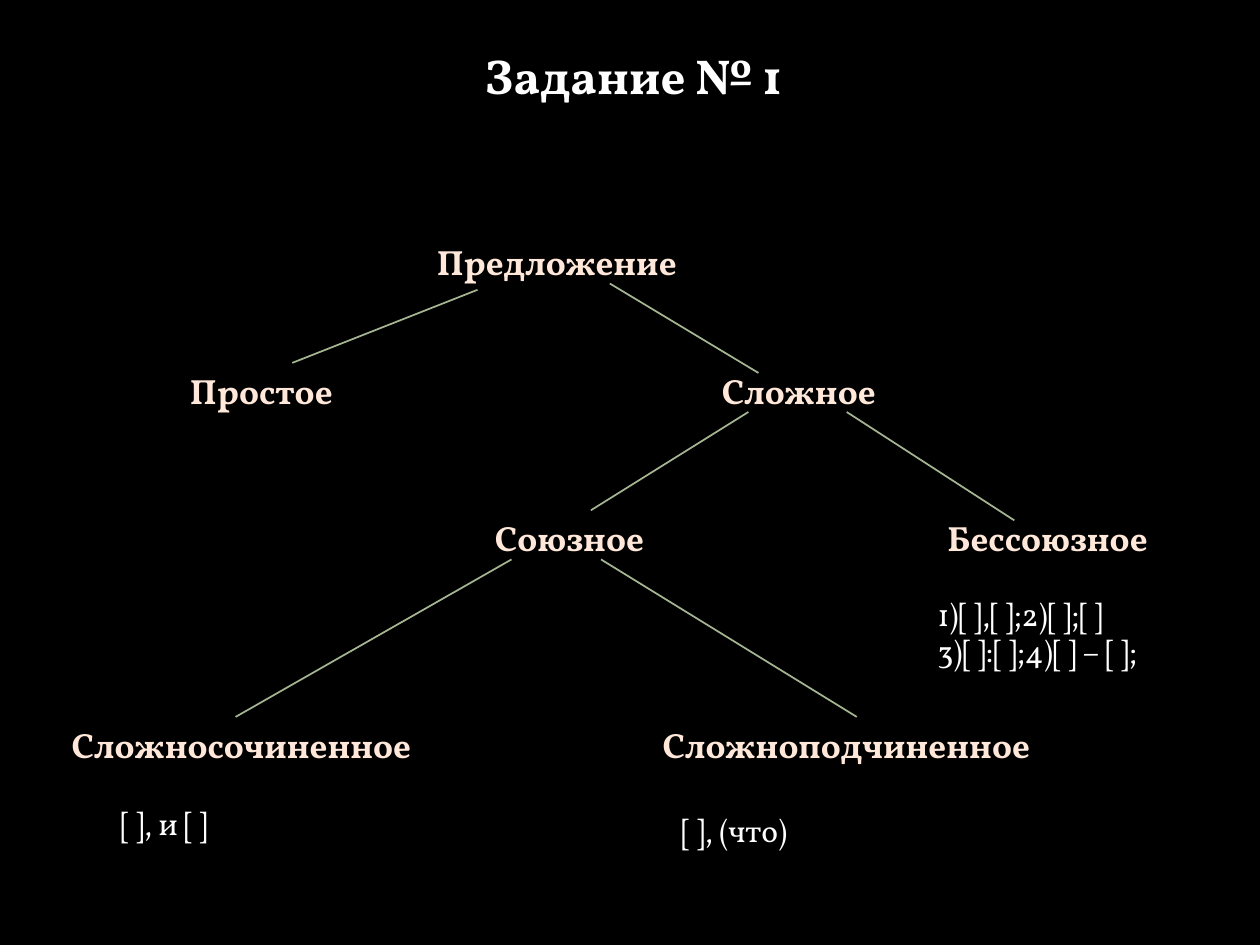
from pptx import Presentation
from pptx.dml.color import RGBColor
from pptx.enum.shapes import MSO_CONNECTOR
from pptx.enum.text import MSO_AUTO_SIZE, PP_ALIGN
from pptx.oxml.ns import qn
from pptx.util import Inches, Pt

FONT = "Vollkorn"
BLACK, WHITE, PEACH, GREEN = "000000", "FFFFFF", "FFE8D9", "A5B592"

NODES = [
    ("Предложение", 2.11, 1.86, 3.36, PP_ALIGN.RIGHT),
    ("Простое", 1.41, 2.88, 1.83, PP_ALIGN.LEFT),
    ("Сложное", 5.63, 2.88, 1.75, PP_ALIGN.LEFT),
    ("Союзное", 3.83, 4.05, 2.13, PP_ALIGN.LEFT),
    ("Бессоюзное", 7.42, 4.05, 1.98, PP_ALIGN.LEFT),
    ("Сложносочиненное", 0.47, 5.69, 3.2, PP_ALIGN.LEFT),
    ("Сложноподчиненное", 5.16, 5.69, 3.28, PP_ALIGN.LEFT),
]
BRANCHES = [
    (3.79, 2.3, 2.32, 2.88),
    (4.84, 2.25, 6.02, 2.96),
    (5.94, 3.27, 4.69, 4.05),
    (6.72, 3.27, 8.05, 4.13),
    (4.06, 4.44, 1.87, 5.69),
    (4.77, 4.44, 6.8, 5.69),
]
SCHEMES = [
    (["1)[ ],[ ];2)[ ];[ ]", "3)[ ]:[ ];4)[ ] – [ ];"], 7.34, 4.67, 2.11, 0.71),
    (["[ ], и [ ]"], 0.86, 6.33, 2.97, 0.4),
    (["[ ], (что)"], 5.31, 6.39, 3.05, 0.4),
]


def color(value):
    return RGBColor.from_string(value)


class SlideBuilder:
    """Holds the current slide and draws its styled elements."""

    def __init__(self, slide):
        self.slide = slide
        fill = slide.background.fill
        fill.solid()
        fill.fore_color.rgb = color(BLACK)

    def text(self, lines, x, y, w, h, size, ink=WHITE, bold=False, align=PP_ALIGN.LEFT):
        box = self.slide.shapes.add_textbox(Inches(x), Inches(y), Inches(w), Inches(h))
        tf = box.text_frame
        tf.word_wrap = True
        tf.auto_size = MSO_AUTO_SIZE.SHAPE_TO_FIT_TEXT
        tf.text = "\n".join(lines)
        for p in tf.paragraphs:
            p.alignment = align
            p.font.name = FONT
            p.font.size = Pt(size)
            p.font.bold = bold
            p.font.color.rgb = color(ink)

    def node(self, label, x, y, w, align):
        self.text([label], x, y, w, 0.44, 20, PEACH, True, align)

    def branch(self, x1, y1, x2, y2):
        line = self.slide.shapes.add_connector(
            MSO_CONNECTOR.STRAIGHT, Inches(x1), Inches(y1), Inches(x2), Inches(y2)
        )
        line.line.color.rgb = color(GREEN)
        line.line.width = Pt(1)
        sp_pr = line._element.spPr
        sp_pr.append(sp_pr.makeelement(qn("a:effectLst"), {}))


def main():
    prs = Presentation()
    prs.slide_width, prs.slide_height = Inches(10), Inches(7.5)
    s = SlideBuilder(prs.slides.add_slide(prs.slide_layouts[6]))
    for node in NODES:
        s.node(*node)
    for branch in BRANCHES:
        s.branch(*branch)
    for scheme in SCHEMES:
        s.text(*scheme, size=18)
    s.text(["Задание № 1"], 3.75, 0.31, 2.58, 0.57, 28, bold=True)
    prs.save("out.pptx")


if __name__ == "__main__":
    main()
